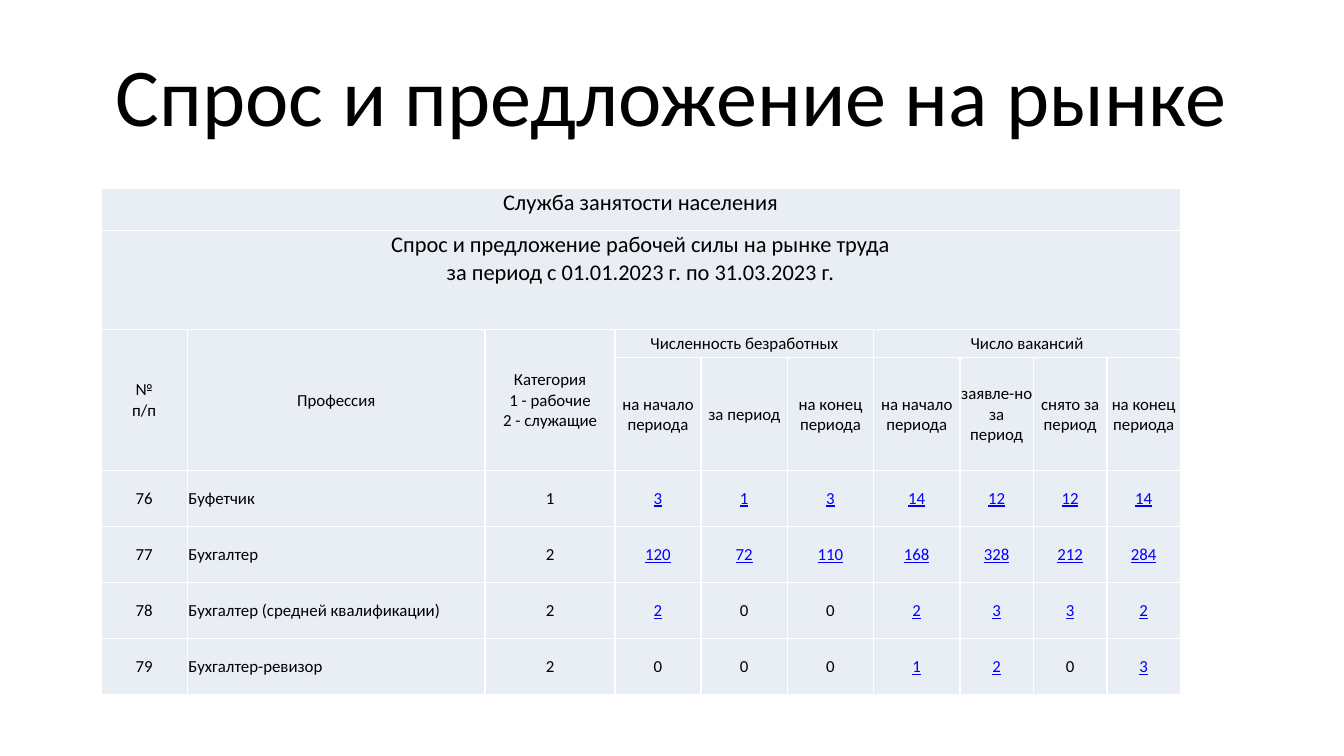
"""Build a slide with a table of labour market supply and demand."""
from lxml import etree
from pptx import Presentation
from pptx.dml.color import RGBColor
from pptx.enum.text import MSO_ANCHOR, PP_ALIGN
from pptx.oxml.ns import qn
from pptx.util import Cm, Pt

CENTER, LEFT = PP_ALIGN.CENTER, PP_ALIGN.LEFT
MIDDLE, TOP = MSO_ANCHOR.MIDDLE, MSO_ANCHOR.TOP
COLORS = {"text": "000000", "link": "0000FF", "cell": "E9EDF4", "border": "FFFFFF"}

COLUMN_WIDTHS = [1.63, 5.63, 2.45] + [1.63] * 4 + [1.39] * 3
ROW_HEIGHTS = [0.8, 1.87, 0.53, 2.13] + [1.06] * 4
HEADINGS = {
    (0, 0): "Служба занятости населения",
    (1, 0): "Спрос и предложение рабочей силы на рынке труда\n"
            "за период с 01.01.2023 г. по 31.03.2023 г.",
    (2, 0): "№\nп/п",
    (2, 1): "Профессия",
    (2, 2): "Категория\n1 - рабочие\n2 - служащие",
    (2, 3): "Численность безработных",
    (2, 6): "Число вакансий",
}
PERIODS = ["на начало периода", "за период", "на конец периода", "на начало периода",
           "заявле-но за период", "снято за период", "на конец периода"]
PROFESSIONS = [
    (76, "Буфетчик", 1, 3, 1, 3, 14, 12, 12, 14),
    (77, "Бухгалтер", 2, 120, 72, 110, 168, 328, 212, 284),
    (78, "Бухгалтер (средней квалификации)", 2, 2, 0, 0, 2, 3, 3, 2),
    (79, "Бухгалтер-ревизор", 2, 0, 0, 0, 1, 2, 0, 3),
]
MERGES = [(0, 0, 0, 9), (1, 0, 1, 9), (2, 0, 3, 0), (2, 1, 3, 1),
          (2, 2, 3, 2), (2, 3, 2, 5), (2, 6, 2, 9)]


def write(paragraph, text, size, color="text", align=CENTER):
    paragraph.text = text
    paragraph.alignment = align
    paragraph.font.name = "Calibri"
    paragraph.font.size = Pt(size)
    paragraph.font.color.rgb = RGBColor.from_string(COLORS[color])
    paragraph.font.underline = color == "link"


def add_borders(cell):
    properties = cell._tc.get_or_add_tcPr()
    for side in ("lnL", "lnR", "lnT", "lnB"):
        line = etree.SubElement(properties, qn(f"a:{side}"), w=str(Pt(1)))
        fill = etree.SubElement(line, qn("a:solidFill"))
        etree.SubElement(fill, qn("a:srgbClr"), val=COLORS["border"])


presentation = Presentation()
presentation.slide_width, presentation.slide_height = Cm(25.4), Cm(14.29)
slide = presentation.slides.add_slide(presentation.slide_layouts[6])

title = slide.shapes.add_textbox(Cm(1.27), Cm(0.58), Cm(22.86), Cm(2.38)).text_frame
title.word_wrap = True
title.vertical_anchor = MIDDLE
write(title.paragraphs[0], "Спрос и предложение на рынке", 44)

texts = dict(HEADINGS)
for column, period in enumerate(PERIODS, start=3):
    texts[3, column] = period
for row, profession in enumerate(PROFESSIONS, start=4):
    for column, value in enumerate(profession):
        texts[row, column] = str(value)

market = slide.shapes.add_table(
    len(ROW_HEIGHTS), len(COLUMN_WIDTHS), Cm(1.91), Cm(3.56),
    Cm(sum(COLUMN_WIDTHS)), Cm(sum(ROW_HEIGHTS))).table
market.first_row = market.horz_banding = False
for column, width in enumerate(COLUMN_WIDTHS):
    market.columns[column].width = Cm(width)

for row, height in enumerate(ROW_HEIGHTS):
    market.rows[row].height = Cm(height)
    for column in range(len(COLUMN_WIDTHS)):
        cell = market.cell(row, column)
        cell.margin_left = cell.margin_right = cell.margin_top = Cm(0.02)
        cell.margin_bottom = 0
        cell.vertical_anchor = TOP if row < 2 else MIDDLE
        add_borders(cell)
        cell.fill.solid()
        cell.fill.fore_color.rgb = RGBColor.from_string(COLORS["cell"])
        text = texts.get((row, column), "")
        linked = row > 3 and column > 2 and text != "0"
        write(cell.text_frame.paragraphs[0], text, 12 if row < 2 else 9,
              "link" if linked else "text",
              LEFT if row > 3 and column == 1 else CENTER)

for top, left, bottom, right in MERGES:
    market.cell(top, left).merge(market.cell(bottom, right))

presentation.save("out.pptx")
